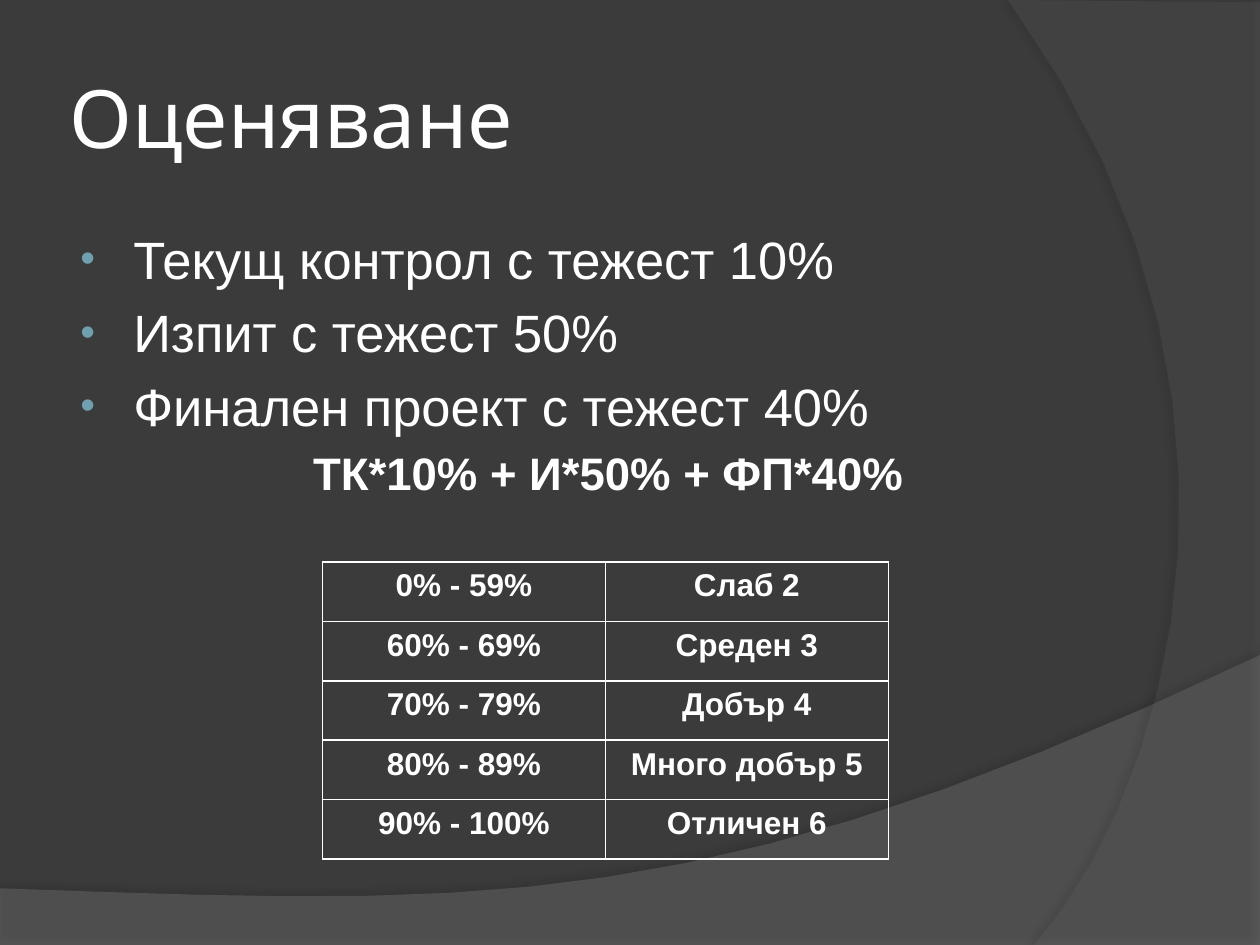
"""Build the grading slide: weights, formula and grade scale."""
import pptx
import pptx.util
import pptx.dml.color
import pptx.enum.text
import pptx.oxml
import pptx.oxml.ns

Inches = pptx.util.Inches
Pt = pptx.util.Pt
RGBColor = pptx.dml.color.RGBColor
ALIGN = pptx.enum.text.PP_ALIGN
ANCHOR = pptx.enum.text.MSO_ANCHOR
NS = pptx.oxml.ns.nsdecls("a")

DARK = RGBColor(0x3B, 0x3B, 0x3B)
WHITE = RGBColor(0xFF, 0xFF, 0xFF)
TEAL = RGBColor(0x6E, 0xA0, 0xB0)
LIGHT_GREY = RGBColor(0x92, 0x92, 0x92)
MID_GREY = RGBColor(0x7B, 0x7B, 0x7B)


def bezier(p0, p1, p2, p3, steps=14):
    points = []
    for i in range(steps + 1):
        t = i / steps
        u = 1 - t
        weights = (u**3, 3 * u * u * t, 3 * u * t * t, t**3)
        points.append(tuple(sum(w * p[axis] for w, p in zip(weights, (p0, p1, p2, p3)))
                            for axis in (0, 1)))
    return points


def add_text(p, text, size, font, bold=False):
    r = p.add_run()
    r.text = text
    r.font.size = Pt(size)
    r.font.name = font
    r.font.bold = bold
    r.font.color.rgb = WHITE


prs = pptx.Presentation()
prs.slide_width = Inches(10)
prs.slide_height = Inches(7.5)
s = prs.slides.add_slide(prs.slide_layouts[5])
s.background.fill.solid()
s.background.fill.fore_color.rgb = DARK
title = s.shapes.title

bottom_wave = [(0, 7.5), (10, 7.5)] + bezier((10, 5.2), (5.59, 7.29), (3.91, 7.19), (0, 7.05))
right_arc = [(10, 0.02), (10, 7.5)] + bezier((8.21, 7.5), (9.35, 6.19), (10.18, 3), (8, 0))
swooshes = [
    (bottom_wave, LIGHT_GREY, 28, 35, 3.5, 270),
    (right_arc, MID_GREY, 15, 45, 4, 180),
]
for points, color, alpha, shadow_alpha, dist, angle in swooshes:
    points = [(Inches(x), Inches(y)) for x, y in points]
    builder = s.shapes.build_freeform(*points[0], scale=1.0)
    builder.add_line_segments(points[1:], close=True)
    sp = builder.convert_to_shape()
    sp.fill.solid()
    sp.fill.fore_color.rgb = color
    sp.line.fill.background()
    srgb = sp.element.spPr.find(".//" + pptx.oxml.ns.qn("a:srgbClr"))
    srgb.append(pptx.oxml.parse_xml(f'<a:alpha {NS} val="{alpha * 1000}"/>'))
    sp.element.spPr.append(pptx.oxml.parse_xml(
        f'<a:effectLst {NS}><a:outerShdw blurRad="{Pt(4)}" dist="{Pt(dist)}" '
        f'dir="{angle * 60000}" algn="ctr" rotWithShape="0"><a:srgbClr val="000000">'
        f'<a:alpha val="{shadow_alpha * 1000}"/></a:srgbClr></a:outerShdw></a:effectLst>'))
    title.element.addprevious(sp.element)

title.left, title.top = Inches(0.5), Inches(0.3)
title.width, title.height = Inches(8.17), Inches(1.25)
tf = title.text_frame
tf.vertical_anchor = ANCHOR.MIDDLE
tf.margin_left = tf.margin_right = tf.margin_top = tf.margin_bottom = Inches(0.05)
tf.paragraphs[0].alignment = ALIGN.LEFT
add_text(tf.paragraphs[0], "Оценяване", 46, "Karla")

body = s.shapes.add_textbox(Inches(0.5), Inches(1.75), Inches(8.17), Inches(5.62))
tf = body.text_frame
tf.word_wrap = True
weights = ["Текущ контрол с тежест 10%", "Изпит с тежест 50%", "Финален проект с тежест 40%"]
for i, text in enumerate(weights):
    p = tf.paragraphs[0] if i == 0 else tf.add_paragraph()
    p.space_before = Pt(6 if i else 0)
    pPr = p._p.get_or_add_pPr()
    pPr.set("marL", str(Inches(0.46)))
    pPr.set("indent", str(Inches(-0.42)))
    for bullet in (f'<a:buClr {NS}><a:srgbClr val="{TEAL}"/></a:buClr>',
                   f'<a:buSzPct {NS} val="80000"/>',
                   f'<a:buFont {NS} typeface="Arial"/>',
                   f'<a:buChar {NS} char="•"/>'):
        pPr.append(pptx.oxml.parse_xml(bullet))
    add_text(p, text, 30, "Arial")

p = tf.add_paragraph()
p.level = 1
p.alignment = ALIGN.CENTER
p.space_before = Pt(5)
p._p.get_or_add_pPr().set("marL", str(Inches(0.49)))
p._p.get_or_add_pPr().set("indent", "0")
add_text(p, "ТК*10% + И*50% + ФП*40%", 26, "Arial", bold=True)

grades = [
    ("0% - 59%", "Слаб 2"),
    ("60% - 69%", "Среден 3"),
    ("70% - 79%", "Добър 4"),
    ("80% - 89%", "Много добър 5"),
    ("90% - 100%", "Отличен 6"),
]
frame = s.shapes.add_table(len(grades), 2, Inches(2.56), Inches(4.46), Inches(4.49), Inches(2.36))
table = frame.table
table.first_row = False
table.horz_banding = False
for row, texts in zip(table.rows, grades):
    for cell, text in zip(row.cells, texts):
        p = cell.text_frame.paragraphs[0]
        p.alignment = ALIGN.CENTER
        add_text(p, text, 18, "Arial", bold=True)
        tcPr = cell._tc.get_or_add_tcPr()
        for side in ("lnL", "lnR", "lnT", "lnB"):
            tcPr.append(pptx.oxml.parse_xml(
                f'<a:{side} {NS} w="{Pt(1)}"><a:solidFill><a:srgbClr val="{WHITE}"/>'
                f'</a:solidFill></a:{side}>'))
        cell.fill.background()

prs.save("out.pptx")
